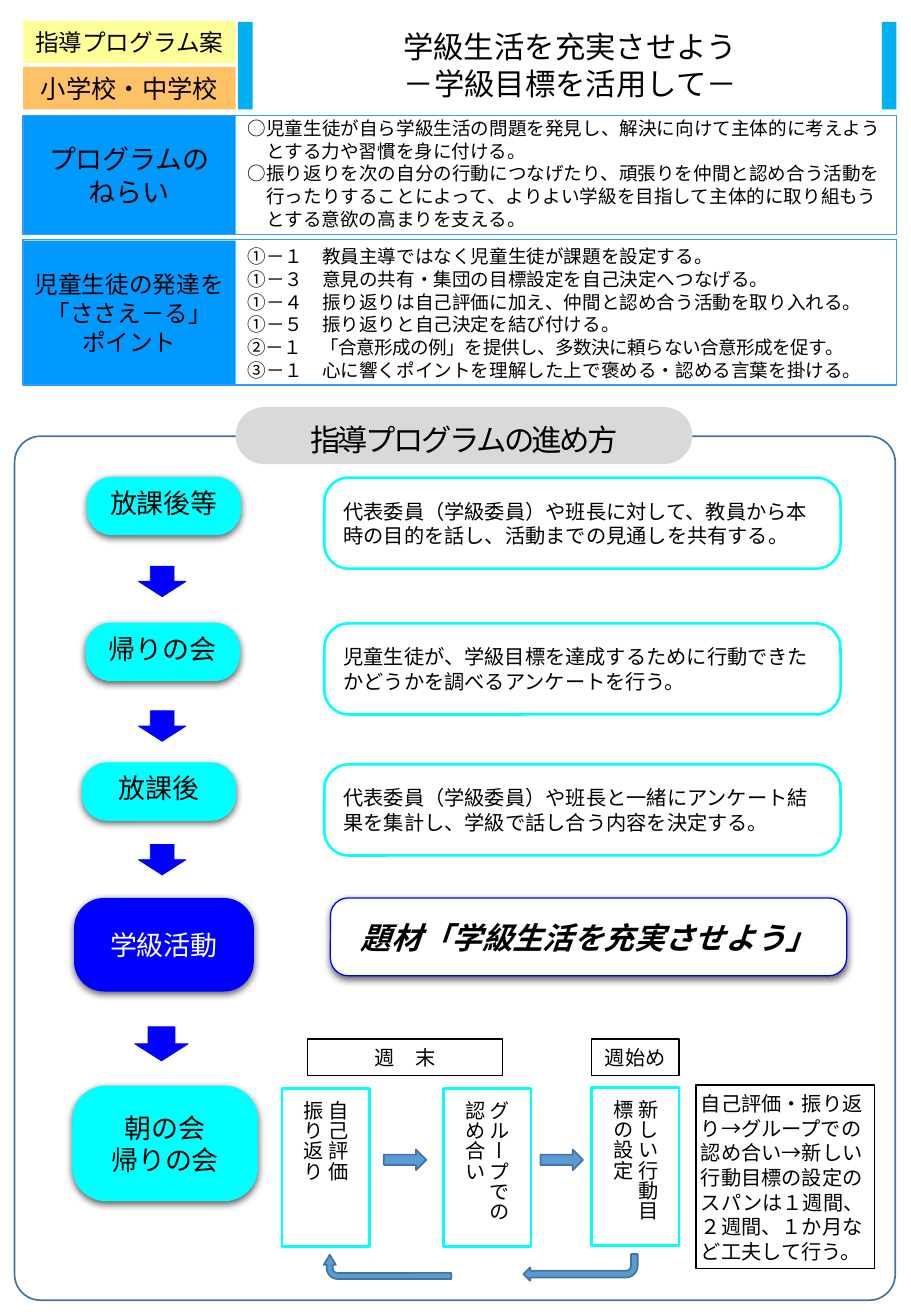
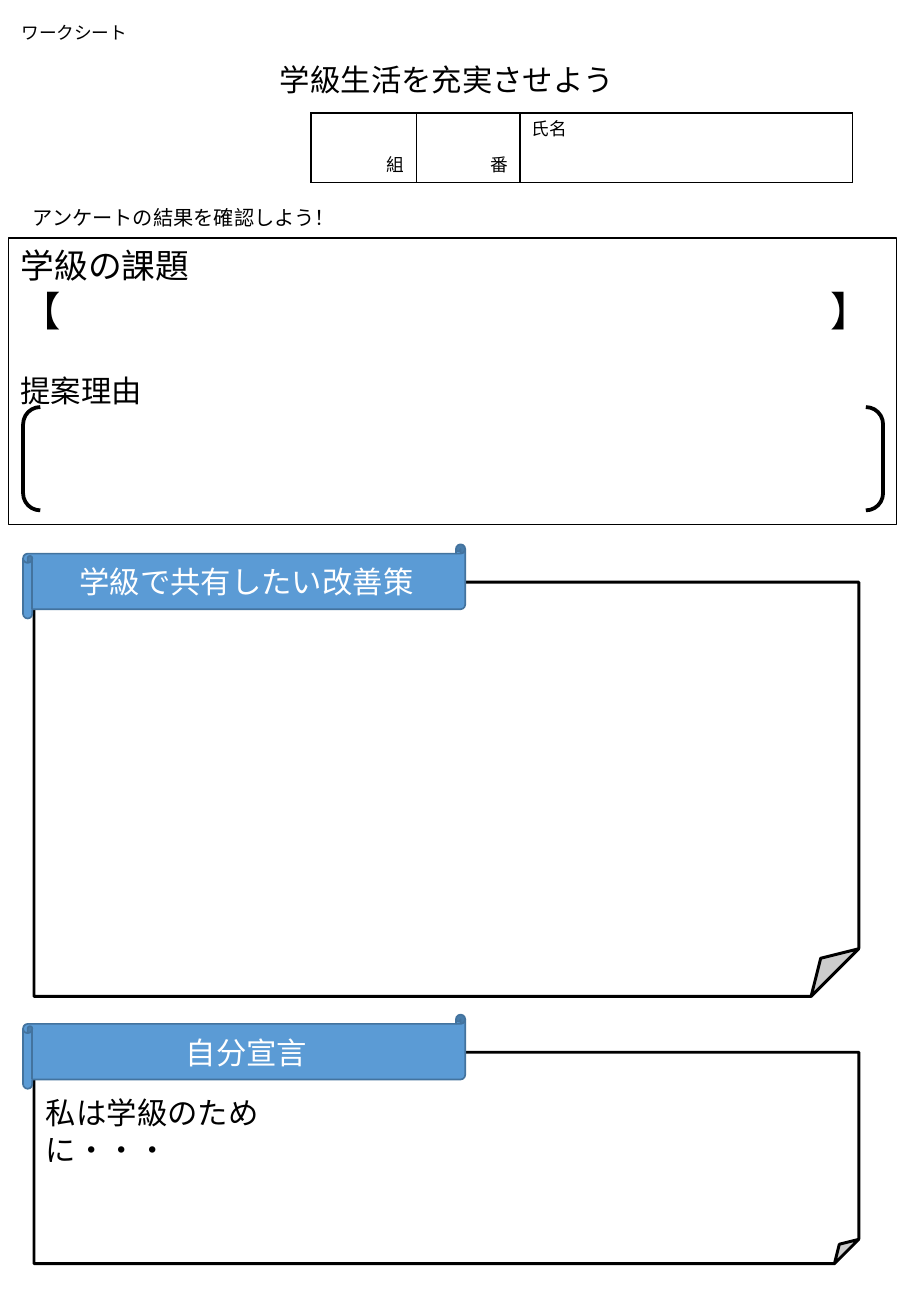
import pptx
import pptx.util
import pptx.dml.color
import pptx.enum.shapes
import pptx.enum.text
import pptx.oxml
import pptx.oxml.ns
import lxml.etree

Inches = pptx.util.Inches
Pt = pptx.util.Pt
SHAPE = pptx.enum.shapes.MSO_SHAPE
ALIGN = pptx.enum.text.PP_ALIGN
ANCHOR = pptx.enum.text.MSO_ANCHOR
qn = pptx.oxml.ns.qn

GOTHIC = "Noto Sans CJK JP"
LATIN = "Calibri"
LINE_HEIGHT = 1.22
COLORS = {
    "text": "000000", "white": "FFFFFF", "navy": "0000FF", "cyan": "00FFFF",
    "label": "0099FF", "label_line": "3399FF", "yellow": "FFFF99",
    "orange": "FF9900", "bar": "00B0F0", "gray": "D9D9D9",
    "arrow": "5B9BD5", "arrow_line": "43739E",
}


def rgb(name):
    """Return the palette colour with this name."""
    return pptx.dml.color.RGBColor.from_string(COLORS[name])


def add_xml(parent, tag, **attributes):
    """Append a DrawingML child with attributes and return it."""
    return lxml.etree.SubElement(parent, qn(tag), attributes)


def write(frame, lines, size, font=GOTHIC, color="text", align=ALIGN.LEFT,
          anchor=ANCHOR.MIDDLE, wrap=True, leading=None, tracking=0):
    """Fill a text frame with evenly formatted paragraphs."""
    frame.auto_size = pptx.enum.text.MSO_AUTO_SIZE.NONE
    frame.word_wrap = wrap
    frame.vertical_anchor = anchor
    frame.text = "\n".join(lines)
    for paragraph in frame.paragraphs:
        style_paragraph(paragraph, size, font, color, align, leading, tracking)


def style_paragraph(paragraph, size, font=GOTHIC, color="text",
                    align=ALIGN.LEFT, leading=None, tracking=0):
    """Set the font, alignment and line pitch of one paragraph."""
    paragraph.alignment = align
    paragraph.line_spacing = Pt(leading or round(size * LINE_HEIGHT, 1))
    paragraph.space_before = Pt(0)
    paragraph.font.size = Pt(size)
    paragraph.font.name = font
    paragraph.font.color.rgb = rgb(color)
    defaults = paragraph._p.pPr.find(qn("a:defRPr"))
    add_xml(defaults, "a:ea", typeface=font)
    if tracking:
        defaults.set("spc", str(round(tracking * 100)))


def indent(paragraph, left, first=0):
    """Set the left margin and first-line indent of a paragraph in points."""
    properties = paragraph._p.get_or_add_pPr()
    properties.set("marL", str(Pt(left)))
    properties.set("indent", str(Pt(first)))


def place(shape, box):
    """Move a placeholder to a box in inches."""
    shape.left, shape.top, shape.width, shape.height = map(Inches, box)


def set_adjustments(shape, values):
    """Write the adjustment values of a preset shape."""
    guides = shape._element.spPr.find(qn("a:prstGeom")).get_or_add_avLst()
    for guide in list(guides):
        guides.remove(guide)
    for number, value in enumerate(values, 1):
        name = f"adj{number}" if len(values) > 1 else "adj"
        add_xml(guides, "a:gd", name=name, fmla=f"val {round(value * 100000)}")


def add_shape(slide, kind, box, fill=None, line=None, width=1.0, adjust=(),
              shadow=False, rotation=0):
    """Add a preset shape with plain fill, outline and optional shadow."""
    shape = slide.shapes.add_shape(kind, *map(Inches, box))
    shape.shadow.inherit = False
    shape.rotation = rotation
    if adjust:
        set_adjustments(shape, adjust)
    if fill:
        shape.fill.solid()
        shape.fill.fore_color.rgb = rgb(fill)
    else:
        shape.fill.background()
    if line:
        shape.line.color.rgb = rgb(line)
        shape.line.width = Pt(width)
    else:
        shape.line.fill.background()
    if shadow:
        effects = shape._element.spPr.find(qn("a:effectLst"))
        outer = add_xml(effects, "a:outerShdw", blurRad=str(Pt(4.5)),
                        dist=str(Pt(1.5)), dir="5400000", algn="ctr",
                        rotWithShape="0")
        black = add_xml(outer, "a:srgbClr", val=COLORS["text"])
        add_xml(black, "a:alpha", val="63000")
    return shape


def add_label(slide, box, fill, lines, size):
    """Add a coloured heading cell with centred text."""
    label = add_shape(slide, SHAPE.RECTANGLE, box, fill)
    write(label.text_frame, lines, size, LATIN, align=ALIGN.CENTER, wrap=False)
    return label


def add_step(slide, box, lines, adjust, fill="cyan", color="text",
             line="cyan", leading=None):
    """Add a shadowed rounded step of the flow."""
    step = add_shape(slide, SHAPE.ROUNDED_RECTANGLE, box, fill, line, 0.75,
                     [adjust], shadow=True)
    write(step.text_frame, lines, 16, color=color, align=ALIGN.CENTER,
          wrap=False, leading=leading)


def add_note(slide, box, text, align=ALIGN.CENTER, side=0.1):
    """Add a thinly outlined box with text from its top."""
    note = add_shape(slide, SHAPE.RECTANGLE, box, None, "text", 0.75)
    note.text_frame.margin_left = note.text_frame.margin_right = Inches(side)
    write(note.text_frame, [text], 12, align=align, anchor=ANCHOR.TOP)


def add_text(slide, box, text, size, font=GOTHIC, anchor=ANCHOR.TOP):
    """Add a one-line text box."""
    frame = slide.shapes.add_textbox(*map(Inches, box)).text_frame
    write(frame, [text], size, font, anchor=anchor)


def fill_list(placeholder, box, lines, hanging=0):
    """Place a bullet-free list in a body placeholder."""
    place(placeholder, box)
    write(placeholder.text_frame, lines, 11)
    for paragraph in placeholder.text_frame.paragraphs:
        indent(paragraph, hanging, -hanging)
        defaults = paragraph._p.pPr.find(qn("a:defRPr"))
        defaults.addprevious(lxml.etree.Element(qn("a:buNone")))


def add_header(slide):
    """Build the programme title, aims and support points."""
    title, aims, points = slide.placeholders
    place(title, (1.51, 0.16, 5.37, 0.74))
    write(title.text_frame, ["学級生活を充実させよう", "－学級目標を活用して－"],
          18, align=ALIGN.CENTER)
    indent(title.text_frame.paragraphs[0], 72)
    fill_list(aims, (1.94, 0.94, 5.43, 0.97), [
        "○児童生徒が自ら学級生活の問題を発見し、解決に向けて主体的に考えようとする力や習慣を身に付ける。",
        "○振り返りを次の自分の行動につなげたり、頑張りを仲間と認め合う活動を行ったりすることによって、"
        "よりよい学級を目指して主体的に取り組もうとする意欲の高まりを支える。"], hanging=11)
    fill_list(points, (1.94, 1.84, 5.69, 1.47), [
        "①－１　教員主導ではなく児童生徒が課題を設定する。",
        "①－３　意見の共有・集団の目標設定を自己決定へつなげる。",
        "①－４　振り返りは自己評価に加え、仲間と認め合う活動を取り入れる。",
        "①－５　振り返りと自己決定を結び付ける。",
        "②－１　「合意形成の例」を提供し、多数決に頼らない合意形成を促す。",
        "③－１　心に響くポイントを理解した上で褒める・認める言葉を掛ける。"])
    consensus = points.text_frame.paragraphs[4]
    consensus._p.pPr.find(qn("a:defRPr")).set("spc", "-30")

    add_label(slide, (0.19, 0.17, 1.75, 0.35), "yellow", ["指導プログラム案"], 14)
    school = add_label(slide, (0.19, 0.55, 1.75, 0.35), "orange",
                       ["小学校・中学校"], 15)
    tint = school._element.spPr.find(qn("a:solidFill"))[0]
    add_xml(tint, "a:alpha", val="60000")
    add_label(slide, (0.19, 0.95, 1.75, 0.98), "label",
              ["プログラムの", "ねらい"], 16)
    add_label(slide, (0.19, 1.98, 1.75, 1.19), "label",
              ["児童生徒の発達を", "「ささえ－る」", "ポイント"], 14)
    for top, height in ((0.95, 0.98), (1.97, 1.2)):
        add_shape(slide, SHAPE.RECTANGLE, (0.19, top, 7.19, height),
                  None, "label_line")
    for left in (1.96, 7.26):
        add_shape(slide, SHAPE.RECTANGLE, (left, 0.18, 0.12, 0.72), "bar")


def add_flow(slide):
    """Build the framed flow of steps."""
    add_shape(slide, SHAPE.ROUNDED_RECTANGLE, (0.12, 3.59, 7.25, 7.11),
              None, "arrow_line", 1, [0.03])
    heading = add_shape(slide, SHAPE.ROUNDED_RECTANGLE,
                        (1.94, 3.35, 3.76, 0.47), "gray", adjust=[0.5])
    write(heading.text_frame, ["指導プログラムの進め方"], 18,
          align=ALIGN.CENTER, leading=26.4, tracking=-1.5)

    for left, top, name, detail_top, detail in (
            (0.72, 3.93, "放課後等", 3.93,
             "代表委員（学級委員）や班長に対して、教員から本時の目的を話し、活動までの見通しを共有する。"),
            (0.71, 5.13, "帰りの会", 5.13,
             "児童生徒が、学級目標を達成するために行動できたかどうかを調べるアンケートを行う。"),
            (0.68, 6.28, "放課後", 6.29,
             "代表委員（学級委員）や班長と一緒にアンケート結果を集計し、学級で話し合う内容を決定する。")):
        add_step(slide, (left, top, 1.26, 0.47), [name], 0.43, leading=15)
        detail_box = add_shape(slide, SHAPE.ROUNDED_RECTANGLE,
                               (2.67, detail_top, 4.25, 0.75), "white",
                               "cyan", 1.5, [0.27])
        write(detail_box.text_frame, [detail], 12)
    add_step(slide, (0.61, 7.39, 1.48, 0.77), ["学級活動"], 0.32,
             "navy", "white", None)
    add_step(slide, (0.6, 8.94, 1.52, 0.94), ["朝の会", "帰りの会"], 0.29)
    for box in ((1.14, 4.66, 0.39, 0.25), (1.14, 5.85, 0.39, 0.25),
                (1.14, 6.95, 0.39, 0.25), (1.11, 8.45, 0.44, 0.28)):
        add_shape(slide, SHAPE.DOWN_ARROW, box, "navy", "navy", 0.5)

    theme = add_shape(slide, SHAPE.ROUNDED_RECTANGLE, (2.72, 7.39, 4.25, 0.64),
                      "white", "navy", 0.75, [0.23], shadow=True)
    write(theme.text_frame, ["題材「学級生活を充実させよう」"], 18,
          align=ALIGN.CENTER, wrap=False)
    theme_font = theme.text_frame.paragraphs[0].font
    theme_font.bold = theme_font.italic = True


def add_cycle(slide):
    """Build the weekly cycle beside the last step."""
    add_note(slide, (2.53, 8.55, 1.61, 0.3), "週　末")
    add_note(slide, (4.87, 8.55, 0.72, 0.3), "週始め")
    for left, top, lines in ((2.32, 8.96, ["自己評価", "振り返り"]),
                             (3.65, 8.96, ["グループでの", "認め合い"]),
                             (4.87, 8.95, ["新しい行動目標の設定"])):
        stage = add_shape(slide, SHAPE.ROUNDED_RECTANGLE,
                          (left, top, 0.72, 1.3), "white", "cyan", 1.5, [0])
        write(stage.text_frame, lines, 12)
        stage.text_frame._txBody.bodyPr.set("vert", "eaVert")
    for kind, box, rotation, adjust in (
            (SHAPE.RIGHT_ARROW, (3.16, 9.46, 0.35, 0.17), 0, ()),
            (SHAPE.RIGHT_ARROW, (4.45, 9.46, 0.35, 0.17), 0, ()),
            (SHAPE.BENT_ARROW, (4.31, 10.32, 0.94, 0.22), 180, ()),
            (SHAPE.BENT_ARROW, (3.09, 9.9, 0.2, 1.05), 270,
             (0.25, 0.25, 0.42, 0.44))):
        add_shape(slide, kind, box, "arrow", "arrow_line", 1, adjust,
                  rotation=rotation)
    add_note(slide, (5.73, 8.93, 1.47, 1.51),
             "自己評価・振り返り→グループでの認め合い→新しい行動目標の設定のスパンは"
             "１週間、２週間、１か月など工夫して行う。", ALIGN.LEFT, 0.04)


def add_name_table(slide):
    """Add the class, number and name fields."""
    table = slide.shapes.add_table(
        1, 3, *map(Inches, (2.56, 0.93, 4.46, 0.57))).table
    table.first_row = table.horz_banding = False
    fields = (("組", 0.87, ALIGN.RIGHT, ANCHOR.BOTTOM),
              ("番", 0.85, ALIGN.RIGHT, ANCHOR.BOTTOM),
              ("氏名", 2.74, ALIGN.LEFT, ANCHOR.TOP))
    for column, (name, width, align, anchor) in enumerate(fields):
        table.columns[column].width = Inches(width)
        cell = table.cell(0, column)
        cell.text = name
        cell.vertical_anchor = anchor
        style_paragraph(cell.text_frame.paragraphs[0], 10.5, align=align)
        properties = cell._tc.get_or_add_tcPr()
        for side in ("a:lnL", "a:lnR", "a:lnT", "a:lnB"):
            border = add_xml(properties, side, w=str(Pt(1)))
            add_xml(add_xml(border, "a:solidFill"), "a:srgbClr",
                    val=COLORS["text"])
        add_xml(properties, "a:noFill")


def add_issue_box(slide):
    """Add the box for the class issue and its reason."""
    issue = add_shape(slide, SHAPE.RECTANGLE, (0.07, 1.96, 7.31, 2.36),
                      None, "text", 0.75)
    frame = issue.text_frame
    write(frame, ["学級の課題", "【\t】", "提案理由"], 20, anchor=ANCHOR.TOP)
    for paragraph, size in zip(frame.paragraphs, (20, 24, 18)):
        paragraph.font.size = Pt(size)
        paragraph.line_spacing = Pt(round(size * LINE_HEIGHT, 1))
    tabs = lxml.etree.Element(qn("a:tabLst"))
    add_xml(tabs, "a:tab", pos=str(Inches(6.67)), algn="l")
    frame.paragraphs[1]._p.pPr.find(qn("a:defRPr")).addprevious(tabs)
    frame.paragraphs[2].space_before = Pt(22)
    add_shape(slide, SHAPE.DOUBLE_BRACKET, (0.19, 3.35, 7.08, 0.85),
              None, "text", 2.25)


def add_sheet(slide, top, height, heading):
    """Add a folded writing sheet under a scroll heading."""
    add_shape(slide, SHAPE.FOLDED_CORNER, (0.28, top, 6.79, height),
              "white", "text", 1.75, [0.115])
    scroll = add_shape(slide, SHAPE.HORIZONTAL_SCROLL,
                       (0.19, top - 0.31, 3.64, 0.61), "arrow", "arrow_line")
    write(scroll.text_frame, [heading], 18, LATIN, "white", ALIGN.CENTER)


def add_worksheet(slide):
    """Build the worksheet slide."""
    title = slide.shapes.title
    place(title, (2.19, 0.45, 2.98, 0.4))
    write(title.text_frame, ["学級生活を充実させよう"], 18,
          align=ALIGN.CENTER, anchor=ANCHOR.TOP, wrap=False)
    add_text(slide, (0.08, 0.11, 4.25, 0.31), "ワークシート", 10.5,
             anchor=ANCHOR.MIDDLE)
    add_name_table(slide)
    add_text(slide, (0.17, 1.64, 6.38, 0.3), "アンケートの結果を確認しよう！", 12)
    add_issue_box(slide)
    add_sheet(slide, 4.79, 3.41, "学級で共有したい改善策")
    add_sheet(slide, 8.66, 1.74, "自分宣言")
    add_text(slide, (0.28, 8.95, 2.84, 0.4), "私は学級のために・・・", 18, LATIN)


def main():
    """Build both slides and save the presentation."""
    deck = pptx.Presentation()
    deck.slide_width, deck.slide_height = Inches(7.5), Inches(10.83)
    program = deck.slides.add_slide(deck.slide_layouts[3])
    add_header(program)
    add_flow(program)
    add_cycle(program)
    add_worksheet(deck.slides.add_slide(deck.slide_layouts[5]))
    deck.save("out.pptx")


if __name__ == "__main__":
    main()
